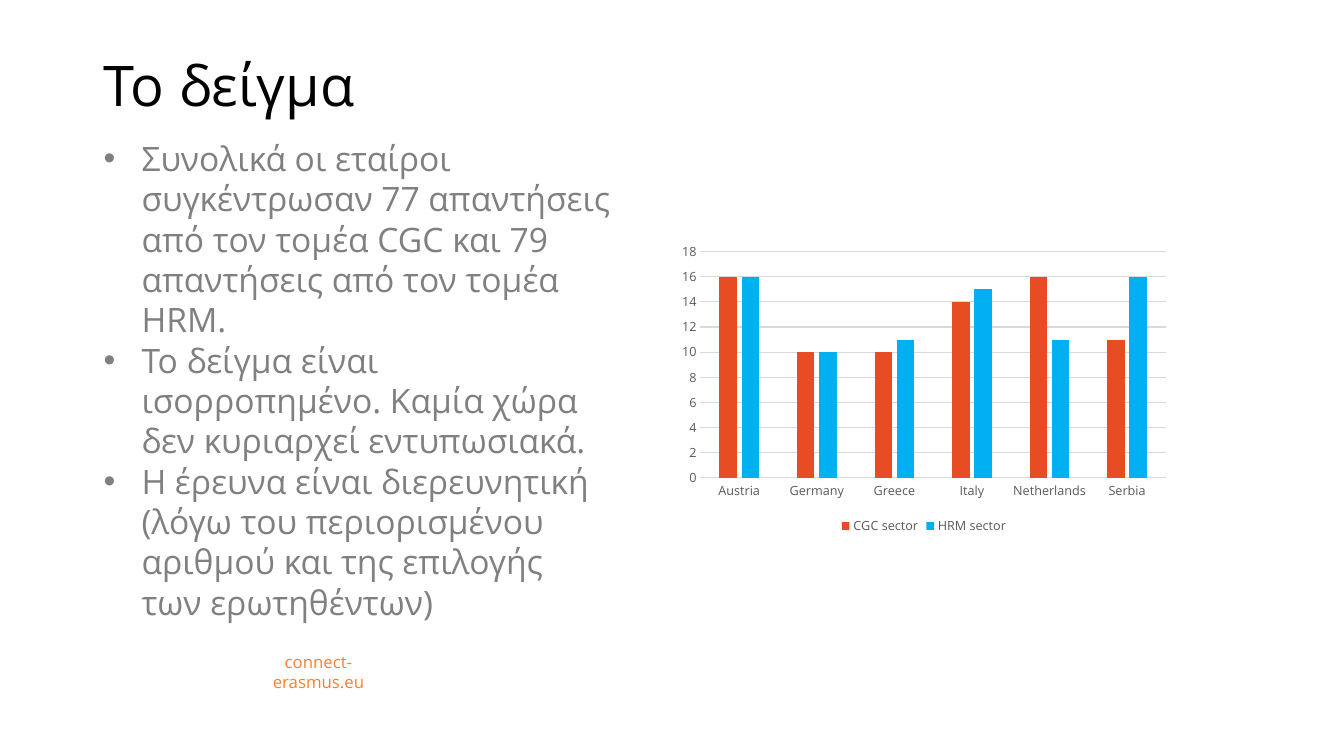
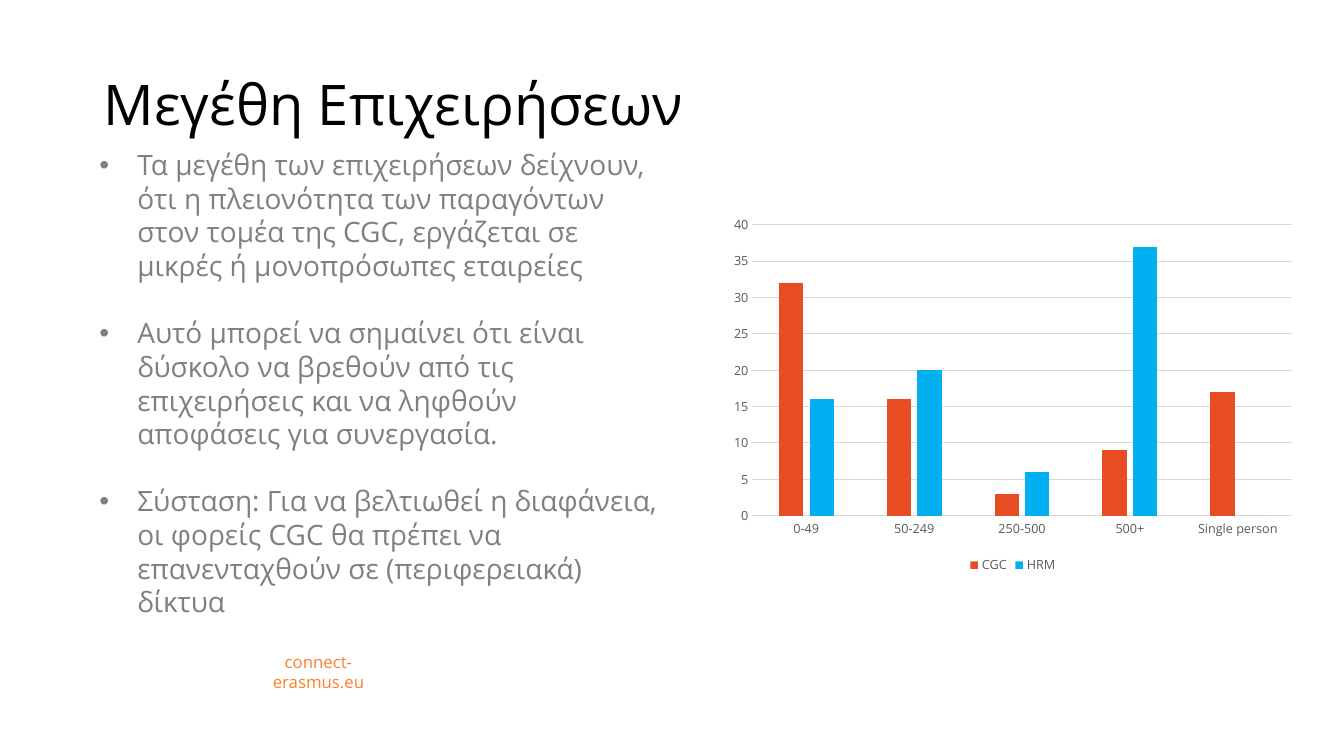
import pptx
import pptx.chart.data
import pptx.dml.color
import pptx.enum.chart
import pptx.enum.text
import pptx.oxml
import pptx.oxml.ns
import pptx.util

Pt = pptx.util.Pt
RGBColor = pptx.dml.color.RGBColor

FONT = "Open Sans"
BLACK = RGBColor(0x00, 0x00, 0x00)
BODY_GRAY = RGBColor(0x80, 0x80, 0x80)
LABEL_GRAY = RGBColor(0x59, 0x59, 0x59)
GRID_GRAY = RGBColor(0xD9, 0xD9, 0xD9)
ORANGE = RGBColor(0xFF, 0x7F, 0x2A)
SERIES_COLORS = (RGBColor(0xE8, 0x4C, 0x22), RGBColor(0x00, 0xB0, 0xF0))
BULLET_INDENT = Pt(27)


class Deck:
    def __init__(self):
        self.presentation = pptx.Presentation()
        self.presentation.slide_width = Pt(960)
        self.presentation.slide_height = Pt(540)
        self.slide = None

    def new_slide(self):
        layout = self.presentation.slide_layouts[6]
        self.slide = self.presentation.slides.add_slide(layout)
        self.add_footer()

    def add_text_frame(self, box, anchor):
        """Add an empty wrapping text box; box is left, top, width, height."""
        shape = self.slide.shapes.add_textbox(*map(Pt, box))
        frame = shape.text_frame
        frame.word_wrap = True
        frame.vertical_anchor = anchor
        return frame

    def style_font(self, font, size, color):
        font.name = FONT
        font.size = Pt(size)
        font.color.rgb = color

    def add_run(self, paragraph, text, size, color):
        run = paragraph.add_run()
        run.text = text
        self.style_font(run.font, size, color)

    def add_title(self, text, box):
        frame = self.add_text_frame(box, pptx.enum.text.MSO_ANCHOR.BOTTOM)
        paragraph = frame.paragraphs[0]
        paragraph.line_spacing = 0.9
        self.add_run(paragraph, text, 40, BLACK)

    def add_footer(self):
        frame = self.add_text_frame((164, 469, 127, 21.5), pptx.enum.text.MSO_ANCHOR.MIDDLE)
        frame.margin_left = frame.margin_right = Pt(14)
        paragraph = frame.paragraphs[0]
        paragraph.alignment = pptx.enum.text.PP_ALIGN.CENTER
        self.add_run(paragraph, "connect-erasmus.eu", 12, ORANGE)

    def add_bullets(self, texts, box, size, gap=0):
        frame = self.add_text_frame(box, pptx.enum.text.MSO_ANCHOR.TOP)
        namespace = pptx.oxml.ns.nsdecls("a")
        for index, text in enumerate(texts):
            paragraph = frame.add_paragraph() if index else frame.paragraphs[0]
            paragraph.space_before = Pt(gap if index else 0)
            properties = paragraph._p.get_or_add_pPr()
            properties.set("marL", str(BULLET_INDENT))
            properties.set("indent", str(-BULLET_INDENT))
            for element in (
                f'<a:buFont {namespace} typeface="Arial"/>',
                f'<a:buChar {namespace} char="•"/>',
            ):
                properties.append(pptx.oxml.parse_xml(element))
            self.add_run(paragraph, text, size, BODY_GRAY)

    def add_column_chart(self, categories, series, box, maximum, step):
        data = pptx.chart.data.CategoryChartData()
        data.categories = categories
        for name, values in series.items():
            data.add_series(name, values)
        kind = pptx.enum.chart.XL_CHART_TYPE.COLUMN_CLUSTERED
        chart = self.slide.shapes.add_chart(kind, *map(Pt, box), data).chart
        self.style_font(chart.font, 10, BLACK)
        chart.has_title = False
        chart.has_legend = True
        chart.legend.position = pptx.enum.chart.XL_LEGEND_POSITION.BOTTOM
        chart.legend.include_in_layout = False
        self.style_font(chart.legend.font, 9, LABEL_GRAY)

        for axis in (chart.category_axis, chart.value_axis):
            axis.major_tick_mark = pptx.enum.chart.XL_TICK_MARK.NONE
            axis.minor_tick_mark = pptx.enum.chart.XL_TICK_MARK.NONE
            self.style_font(axis.tick_labels.font, 9, LABEL_GRAY)
        value_axis = chart.value_axis
        value_axis.minimum_scale = 0
        value_axis.maximum_scale = maximum
        value_axis.major_unit = step
        value_axis.format.line.fill.background()
        for line in (chart.category_axis.format.line, value_axis.major_gridlines.format.line):
            line.color.rgb = GRID_GRAY
            line.width = Pt(0.75)

        plot = chart.plots[0]
        plot.vary_by_categories = False
        plot.gap_width = 219
        plot.overlap = -27
        for column_series, color in zip(plot.series, SERIES_COLORS):
            column_series.format.fill.solid()
            column_series.format.fill.fore_color.rgb = color


def add_sample_slide(deck):
    deck.new_slide()
    deck.add_title("Το δείγμα", (67, 34.5, 334, 54))
    deck.add_bullets(
        [
            "Συνολικά οι εταίροι συγκέντρωσαν 77 απαντήσεις από τον τομέα CGC "
            "και 79 απαντήσεις από τον τομέα HRM.",
            "Το δείγμα είναι ισορροπημένο. Καμία χώρα δεν κυριαρχεί εντυπωσιακά.",
            "Η έρευνα είναι διερευνητική (λόγω του περιορισμένου αριθμού "
            "και της επιλογής των ερωτηθέντων)",
        ],
        (67, 95, 376.5, 337),
        size=24,
    )
    deck.add_column_chart(
        ["Austria", "Germany", "Greece", "Italy", "Netherlands", "Serbia"],
        {"CGC sector": (16, 10, 10, 14, 16, 11), "HRM sector": (16, 10, 11, 15, 11, 16)},
        (480, 169, 360, 216),
        maximum=18,
        step=2,
    )


def add_company_size_slide(deck):
    deck.new_slide()
    deck.add_title("Μεγέθη Επιχειρήσεων", (67, 48, 599, 54))
    deck.add_bullets(
        [
            "Τα μεγέθη των επιχειρήσεων δείχνουν, ότι η πλειονότητα των παραγόντων "
            "στον τομέα της CGC, εργάζεται σε μικρές ή μονοπρόσωπες εταιρείες",
            "Αυτό μπορεί να σημαίνει ότι είναι δύσκολο να βρεθούν από τις "
            "επιχειρήσεις και να ληφθούν αποφάσεις για συνεργασία.",
            "Σύσταση: Για να βελτιωθεί η διαφάνεια, οι φορείς CGC θα πρέπει να "
            "επανενταχθούν σε (περιφερειακά) δίκτυα",
        ],
        (64, 102, 415, 327),
        size=20,
        gap=24,
    )
    deck.add_column_chart(
        ["0-49", "50-249", "250-500", "500+", "Single person"],
        {"CGC": (32, 16, 3, 9, 17), "HRM": (16, 20, 6, 37, 0)},
        (516, 149, 415, 264),
        maximum=40,
        step=5,
    )


def main():
    deck = Deck()
    add_sample_slide(deck)
    add_company_size_slide(deck)
    deck.presentation.save("out.pptx")


if __name__ == "__main__":
    main()
